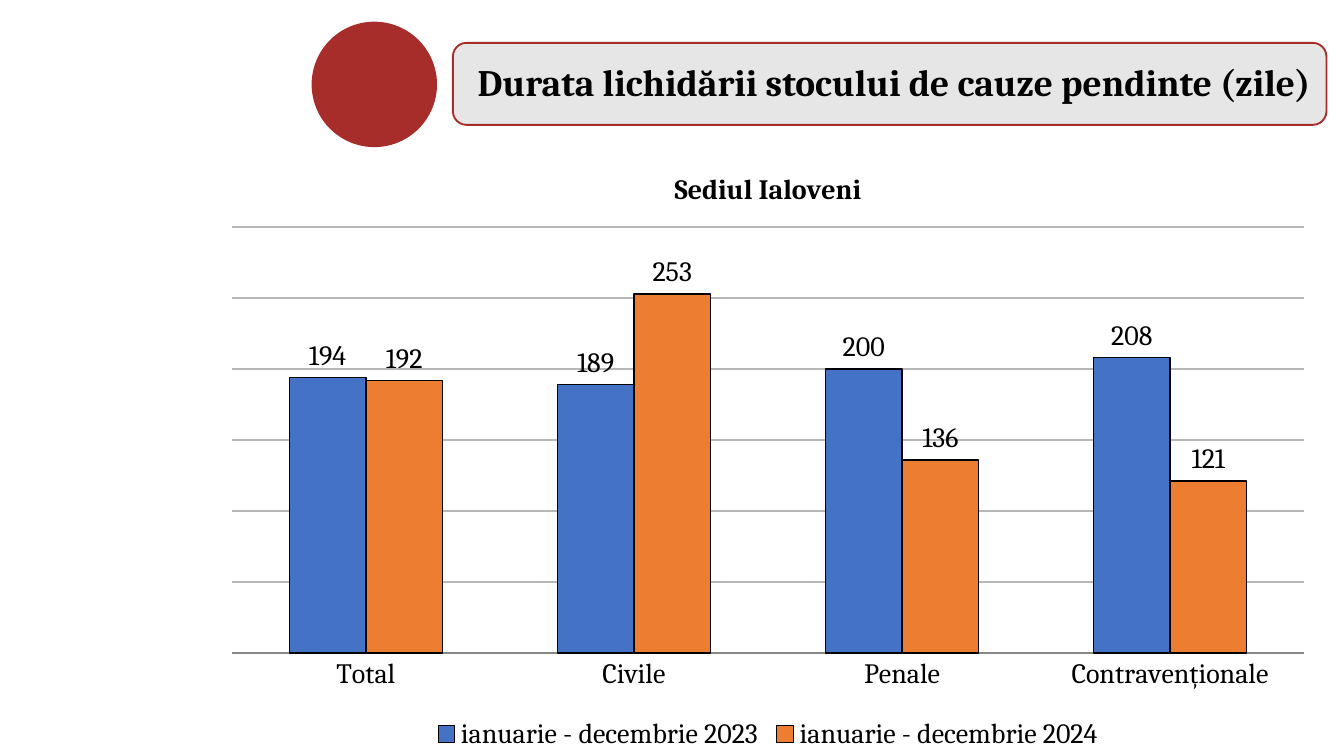
from pptx import Presentation
from pptx.chart.data import CategoryChartData
from pptx.dml.color import RGBColor
from pptx.enum.chart import XL_CHART_TYPE, XL_LABEL_POSITION, XL_LEGEND_POSITION, XL_TICK_MARK
from pptx.enum.shapes import MSO_SHAPE
from pptx.enum.text import MSO_ANCHOR, PP_ALIGN
from pptx.util import Cm, Pt

OVAL = MSO_SHAPE.OVAL
ROUNDED = MSO_SHAPE.ROUNDED_RECTANGLE
COLUMNS = XL_CHART_TYPE.COLUMN_CLUSTERED
OUTSIDE = XL_LABEL_POSITION.OUTSIDE_END
BOTTOM = XL_LEGEND_POSITION.BOTTOM
NO_TICK = XL_TICK_MARK.NONE
CENTER = PP_ALIGN.CENTER
MIDDLE = MSO_ANCHOR.MIDDLE

RED, GREY, GRID = "A72D2A", "E6E6E6", "B7B7B7"
BLACK, BLUE, ORANGE = "000000", "4472C4", "ED7D31"


def rgb(value):
    return RGBColor.from_string(value)


class SlideBuilder:
    font = "Cambria"

    def __init__(self, slide):
        self.s = slide

    def style(self, font, size, bold=False):
        font.name, font.size, font.bold = self.font, Pt(size), bold
        font.color.rgb = rgb(BLACK)

    def outline(self, line, color, width):
        line.color.rgb = rgb(color)
        line.width = Pt(width)

    def shape(self, kind, box, fill, line=None):
        sp = self.s.shapes.add_shape(kind, *map(Cm, box))
        sp.shadow.inherit = False
        sp.fill.solid()
        sp.fill.fore_color.rgb = rgb(fill)
        if line:
            self.outline(sp.line, line, 1)
        else:
            sp.line.fill.background()

    def text(self, box, text, size):
        tf = self.s.shapes.add_textbox(*map(Cm, box)).text_frame
        tf.word_wrap = True
        tf.vertical_anchor = MIDDLE
        tf.text = text
        p = tf.paragraphs[0]
        p.alignment = CENTER
        p.line_spacing = 0.9
        self.style(p.runs[0].font, size, True)

    def column_chart(self, box, title, categories, series, size):
        data = CategoryChartData(number_format="0")
        data.categories = categories
        for name, values, _ in series:
            data.add_series(name, values)
        chart = self.s.shapes.add_chart(COLUMNS, *map(Cm, box), data).chart
        self.style(chart.font, size)

        # Title and legend
        tf = chart.chart_title.text_frame
        tf.text = title
        self.style(tf.paragraphs[0].runs[0].font, size, True)
        chart.chart_title.include_in_layout = False
        chart.has_legend = True
        chart.legend.position = BOTTOM
        chart.legend.include_in_layout = False
        self.style(chart.legend.font, size)

        # Axes
        axis = chart.value_axis
        axis.visible = False
        axis.minimum_scale, axis.maximum_scale, axis.major_unit = 0, 300, 50
        self.outline(axis.major_gridlines.format.line, GRID, 0.75)
        axis = chart.category_axis
        axis.major_tick_mark = NO_TICK
        self.outline(axis.format.line, "878787", 0.75)
        self.style(axis.tick_labels.font, size)

        # Columns and their values
        plot = chart.plots[0]
        plot.gap_width, plot.overlap = 150, 0
        plot.vary_by_categories = False
        for ser, (_, _, color) in zip(plot.series, series):
            ser.format.fill.solid()
            ser.format.fill.fore_color.rgb = rgb(color)
            self.outline(ser.format.line, BLACK, 0.75)
            labels = ser.data_labels
            labels.show_value = True
            labels.position = OUTSIDE
            self.style(labels.font, size)


def main():
    prs = Presentation()
    prs.slide_width, prs.slide_height = Cm(25.4), Cm(14.28)
    b = SlideBuilder(prs.slides.add_slide(prs.slide_layouts[6]))

    # Heading
    b.shape(OVAL, (5.89, 0.41, 2.37, 2.37), RED)
    b.shape(ROUNDED, (8.56, 0.81, 16.51, 1.55), GREY, RED)
    b.text((8.41, 1.08, 16.99, 1.02),
           "Durata lichidării stocului de cauze pendinte (zile)", 20)

    # Chart of days per type of case
    b.column_chart(
        (3.96, 2.77, 21.11, 11.51), "Sediul Ialoveni",
        ["Total", "Civile", "Penale", "Contravenționale"],
        [("ianuarie - decembrie 2023", (194, 189, 200, 208), BLUE),
         ("ianuarie - decembrie 2024", (192, 253, 136, 121), ORANGE)], 15)

    prs.save("out.pptx")


if __name__ == "__main__":
    main()
